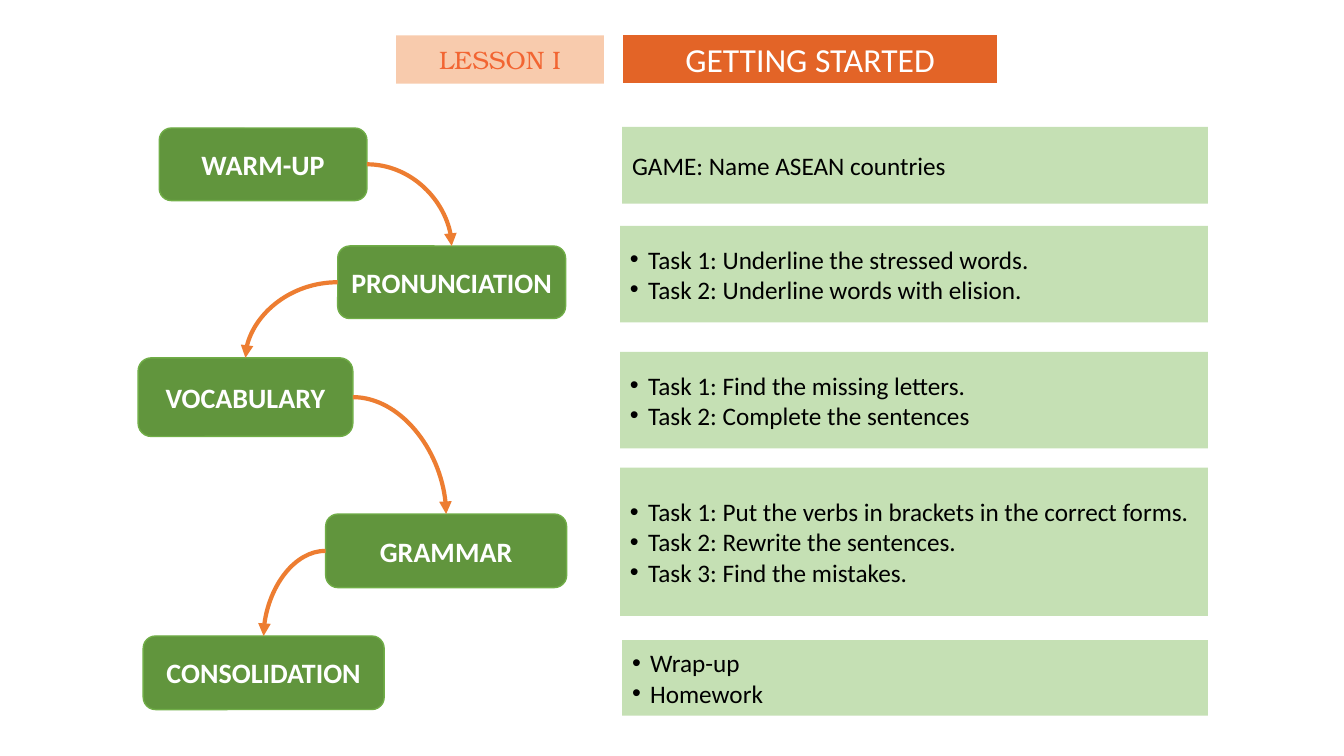
from itertools import pairwise

from lxml.etree import SubElement
from pptx import Presentation
from pptx.dml.color import RGBColor
from pptx.enum.shapes import MSO_CONNECTOR, MSO_SHAPE
from pptx.enum.text import MSO_ANCHOR, MSO_AUTO_SIZE, PP_ALIGN
from pptx.oxml.ns import qn
from pptx.util import Inches, Pt

WHITE = RGBColor(0xFF, 0xFF, 0xFF)
BLACK = RGBColor(0x00, 0x00, 0x00)
STAGE_GREEN = RGBColor(0x61, 0x95, 0x3D)
EDGE_GREEN = RGBColor(0x70, 0xAD, 0x47)
TASK_GREEN = RGBColor(0xC5, 0xE0, 0xB4)
ARROW_ORANGE = RGBColor(0xED, 0x7D, 0x31)
TITLE_ORANGE = RGBColor(0xE3, 0x64, 0x27)
LESSON_PEACH = RGBColor(0xF8, 0xCB, 0xAD)
LESSON_ORANGE = RGBColor(0xF2, 0x65, 0x32)

TITLE = ("GETTING STARTED", (6.17, 0.34, 3.73, 0.49))
LESSON = ("LESSON I", (3.93, 0.35, 2.06, 0.48))
STAGES = [
    ("WARM-UP", (1.58, 1.27, 2.06, 0.72)),
    ("PRONUNCIATION", (3.35, 2.44, 2.26, 0.72)),
    ("VOCABULARY", (1.37, 3.55, 2.13, 0.78)),
    ("GRAMMAR", (3.23, 5.1, 2.39, 0.73)),
    ("CONSOLIDATION", (1.42, 6.31, 2.39, 0.73)),
]
TASKS = [
    (["GAME: Name ASEAN countries"], (6.17, 1.26, 0.76)),
    (["Task 1: Underline the stressed words.",
      "Task 2: Underline words with elision."], (6.15, 2.24, 0.96)),
    (["Task 1: Find the missing letters.",
      "Task 2: Complete the sentences"], (6.15, 3.49, 0.96)),
    (["Task 1: Put the verbs in brackets in the correct forms.",
      "Task 2: Rewrite the sentences.",
      "Task 3: Find the mistakes."], (6.15, 4.64, 1.47)),
    (["Wrap-up", "Homework"], (6.17, 6.35, 0.75)),
]
TASK_RIGHT = 11.98
BULLET_INDENT = Inches(0.18)
TOP_SITE, LEFT_SITE, RIGHT_SITE = 0, 1, 3

TITLE_FONT = {"name": "Calibri", "size": Pt(24), "bold": False}
LESSON_FONT = {"name": "TeX Gyre Bonum", "size": Pt(18), "bold": False}
STAGE_FONT = {"name": "Calibri", "size": Pt(20), "bold": True}
TASK_FONT = {"name": "Calibri", "size": Pt(18), "bold": False}


def place(shape, box):
    """Move and size a shape from a box in inches."""
    for name, value in zip(("left", "top", "width", "height"), box):
        setattr(shape, name, Inches(value))


def paint(shape, fill, edge=None, edge_width=1):
    """Give a shape its fill and outline."""
    shape.shadow.inherit = False
    shape.fill.solid()
    shape.fill.fore_color.rgb = fill
    if edge is None:
        shape.line.fill.background()
    else:
        shape.line.color.rgb = edge
        shape.line.width = Pt(edge_width)


def write(shape, lines, font_format, color, align=PP_ALIGN.CENTER):
    """Fill a shape with formatted lines of text."""
    frame = shape.text_frame
    frame_format = {"word_wrap": True, "auto_size": MSO_AUTO_SIZE.NONE,
                    "vertical_anchor": MSO_ANCHOR.MIDDLE}
    for name, value in frame_format.items():
        setattr(frame, name, value)
    frame.text = "\n".join(lines)
    for paragraph in frame.paragraphs:
        paragraph.alignment = align
        font = paragraph.runs[0].font
        for name, value in font_format.items():
            setattr(font, name, value)
        font.color.rgb = color


def add_box(slide, kind, box):
    """Add a preset shape in a box given in inches."""
    return slide.shapes.add_shape(kind, *map(Inches, box))


def add_bullets(shape):
    """Put a hanging bullet before each paragraph."""
    for paragraph in shape.text_frame.paragraphs:
        properties = paragraph._p.get_or_add_pPr()
        properties.set("marL", str(BULLET_INDENT))
        properties.set("indent", str(-BULLET_INDENT))
        SubElement(properties, qn("a:buFont")).set("typeface", "Arial")
        SubElement(properties, qn("a:buChar")).set("char", "•")


def add_arrow(slide, start, end):
    """Join the side of one stage to the top of the next with a curved arrow."""
    arrow = slide.shapes.add_connector(MSO_CONNECTOR.CURVE, 0, 0, 0, 0)
    arrow.begin_connect(start, RIGHT_SITE if end.left > start.left else LEFT_SITE)
    arrow.end_connect(end, TOP_SITE)
    arrow.line.color.rgb = ARROW_ORANGE
    arrow.line.width = Pt(3)
    properties = arrow._element.spPr
    properties.find(qn("a:prstGeom")).set("prst", "curvedConnector2")
    SubElement(properties.find(qn("a:ln")), qn("a:tailEnd")).set("type", "triangle")
    SubElement(properties, qn("a:effectLst"))


def main():
    """Build the lesson overview slide."""
    presentation = Presentation()
    presentation.slide_width = Inches(13.33)
    presentation.slide_height = Inches(7.5)
    slide = presentation.slides.add_slide(presentation.slide_layouts.get_by_name("Title Only"))

    title_text, title_box = TITLE
    title = slide.shapes.title
    place(title, title_box)
    title.fill.solid()
    title.fill.fore_color.rgb = TITLE_ORANGE
    title.line.color.rgb = WHITE
    title.line.width = Pt(1.5)
    write(title, [title_text], TITLE_FONT, WHITE)

    lesson_text, lesson_box = LESSON
    lesson = add_box(slide, MSO_SHAPE.RECTANGLE, lesson_box)
    paint(lesson, LESSON_PEACH)
    write(lesson, [lesson_text], LESSON_FONT, LESSON_ORANGE)

    stages = []
    for text, box in STAGES:
        stage = add_box(slide, MSO_SHAPE.ROUNDED_RECTANGLE, box)
        paint(stage, STAGE_GREEN, EDGE_GREEN)
        write(stage, [text], STAGE_FONT, WHITE)
        stages.append(stage)
    for start, end in pairwise(stages):
        add_arrow(slide, start, end)

    for lines, (left, top, height) in TASKS:
        task = add_box(slide, MSO_SHAPE.RECTANGLE, (left, top, TASK_RIGHT - left, height))
        paint(task, TASK_GREEN)
        write(task, lines, TASK_FONT, BLACK, PP_ALIGN.LEFT)
        if len(lines) > 1:
            add_bullets(task)

    presentation.save("out.pptx")


if __name__ == "__main__":
    main()
